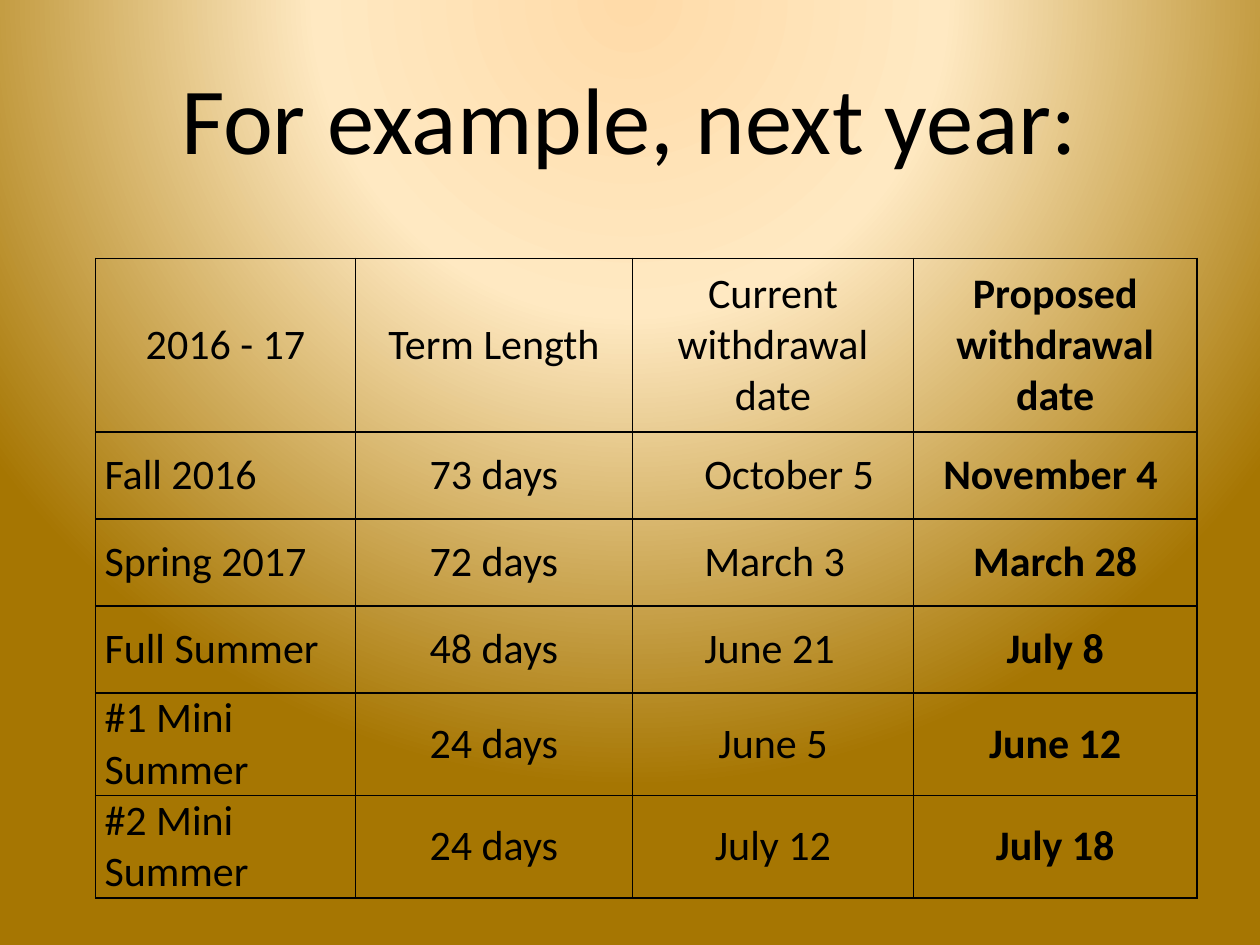
from pptx import Presentation
from pptx import util as u
from pptx.dml.color import RGBColor
from pptx.enum import text
from pptx.oxml import parse_xml
from pptx.oxml.ns import nsdecls, qn

TITLE = "For example, next year:"
ROWS = [
    ("2016 - 17", "Term Length", "Current withdrawal\ndate", "Proposed withdrawal date"),
    ("Fall 2016", "73 days", "October 5", "November 4 "),
    ("Spring 2017", "72 days", "March 3", "March 28"),
    ("Full Summer", "48 days", "June 21", "July 8"),
    ("#1 Mini Summer", "24 days", "June 5", "June 12"),
    ("#2 Mini Summer", "24 days", "July 12", "July 18"),
]
COLS = [2.06, 2.2, 2.23, 2.25]
HEIGHTS = [1.38] + [0.69] * 5
INDENTED = [(r, 2) for r in (1, 2, 3)]
STOPS = [(0, "FFDBA9"), (40, "FFE9C2"), (100, "A67602")]
INK = "000000"


def style(p, size, bold=False):
    for r in p.runs:
        r.font.size, r.font.bold, r.font.name = u.Pt(size), bold, "Calibri"
        r.font.color.rgb = RGBColor.from_string(INK)


def paint_background(s):
    s.background.fill.gradient()
    old = s.element.find(".//" + qn("a:gradFill"))
    stops = "".join(
        f'<a:gs pos="{pos * 1000}"><a:srgbClr val="{color}"/></a:gs>' for pos, color in STOPS)
    old.getparent().replace(old, parse_xml(
        f'<a:gradFill {nsdecls("a")} rotWithShape="1"><a:gsLst>{stops}</a:gsLst>'
        '<a:path path="circle"><a:fillToRect l="50000" t="-80000" r="50000" b="180000"/>'
        '</a:path></a:gradFill>'))


def add_borders(cell):
    tc_pr = cell._tc.get_or_add_tcPr()
    for i, side in enumerate("LRTB"):
        tc_pr.insert(i, parse_xml(
            f'<a:ln{side} {nsdecls("a")} w="12700"><a:solidFill>'
            f'<a:srgbClr val="{INK}"/></a:solidFill></a:ln{side}>'))


def fill_cell(cell, row, col, words):
    cell.text_frame.text = words
    cell.vertical_anchor = text.MSO_ANCHOR.MIDDLE
    cell.margin_left = cell.margin_right = u.Inches(0.07)
    cell.margin_top = cell.margin_bottom = 0
    indented = (row, col) in INDENTED
    left = indented or (row > 0 and col == 0)
    for p in cell.text_frame.paragraphs:
        p.alignment = text.PP_ALIGN.LEFT if left else text.PP_ALIGN.CENTER
        if indented:
            p._p.get_or_add_pPr().set("indent", str(u.Inches(0.5)))
        style(p, 24, col == 3)
    cell.fill.background()
    add_borders(cell)


def main():
    """Build the withdrawal dates slide."""
    prs = Presentation()
    prs.slide_width, prs.slide_height = u.Inches(10), u.Inches(7.5)
    s = prs.slides.add_slide(prs.slide_layouts[5])
    paint_background(s)

    title = s.shapes.title
    title.left, title.top, title.width, title.height = map(u.Inches, (0.62, 0.3, 8.75, 1.25))
    tf = title.text_frame
    tf.text = TITLE
    tf.vertical_anchor = text.MSO_ANCHOR.MIDDLE
    tf.paragraphs[0].alignment = text.PP_ALIGN.CENTER
    style(tf.paragraphs[0], 54)

    box = map(u.Inches, (0.76, 2.05, sum(COLS), sum(HEIGHTS)))
    table = s.shapes.add_table(len(ROWS), len(COLS), *box).table
    table.first_row = table.horz_banding = False
    for column, width in zip(table.columns, COLS):
        column.width = u.Inches(width)
    for row, height in zip(table.rows, HEIGHTS):
        row.height = u.Inches(height)
    for r, row in enumerate(ROWS):
        for c, words in enumerate(row):
            fill_cell(table.cell(r, c), r, c, words)
    prs.save("out.pptx")


if __name__ == "__main__":
    main()
